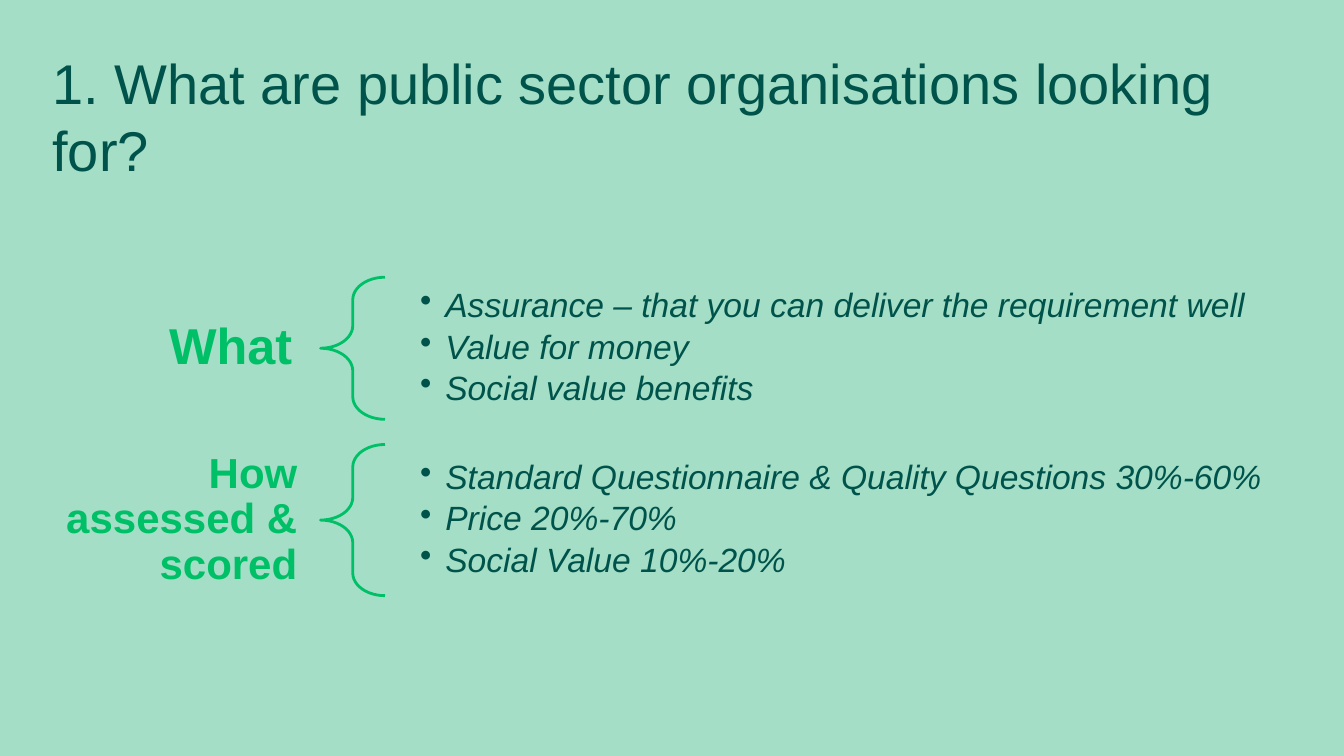
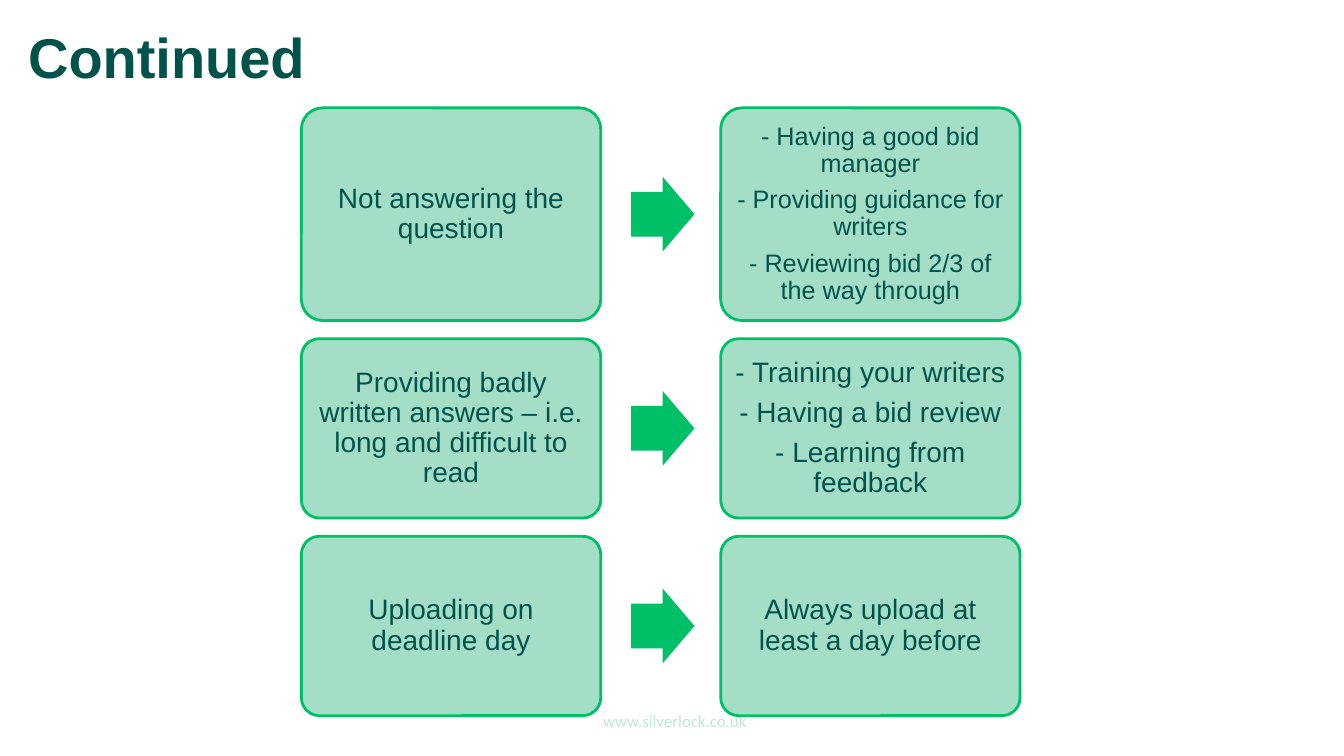
from dataclasses import dataclass

from lxml.etree import SubElement
from pptx import Presentation
from pptx.dml.color import RGBColor
from pptx.enum.shapes import MSO_SHAPE
from pptx.enum.text import MSO_ANCHOR, MSO_AUTO_SIZE, PP_ALIGN
from pptx.oxml.ns import qn
from pptx.util import Emu, Inches, Pt


@dataclass(frozen=True)
class Theme:
    dark: RGBColor = RGBColor.from_string("00534B")
    green: RGBColor = RGBColor.from_string("00C067")
    mint: RGBColor = RGBColor.from_string("A4DEC7")
    pale: RGBColor = RGBColor.from_string("C0E7D7")
    white: RGBColor = RGBColor.from_string("FFFFFF")
    font: str = "Arial"
    footer_font: str = "Calibri"
    title: int = 40
    bullet: int = 24
    box: int = 20
    small: int = 18
    footer: int = 12
    line: int = 2


T = Theme()

CRITERIA_TITLE = "1. What are public sector organisations looking for?"
# label, label size, side inset, row height, bullets
CRITERIA = [
    ("What", 36, 0.28, 1.41, [
        "Assurance – that you can deliver the requirement well",
        "Value for money",
        "Social value benefits",
    ]),
    ("How assessed & scored", 30, 0.23, 1.5, [
        "Standard Questionnaire & Quality Questions 30%-60%",
        "Price 20%-70%",
        "Social Value 10%-20%",
    ]),
]

PITFALLS_TITLE = "Continued"
FOOTER = "www.silverlock.co.uk"
# pitfall, remedies, remedy size, row height
PITFALLS = [
    ("Not answering the question", [
        "- Having a good bid manager",
        "- Providing guidance for writers",
        "- Reviewing bid 2/3 of the way through",
    ], T.small, 2.11),
    ("Providing badly written answers – i.e. long and difficult to read", [
        "- Training your writers",
        "- Having a bid review",
        "- Learning from feedback",
    ], T.box, 1.78),
    ("Uploading on deadline day", ["Always upload at least a day before"], T.box, 1.78),
]


def new_slide(prs, title, background, box, anchor, bold=False):
    s = prs.slides.add_slide(prs.slide_layouts[5])
    s.background.fill.solid()
    s.background.fill.fore_color.rgb = background
    sp = s.shapes.title
    sp.left, sp.top, sp.width, sp.height = map(Inches, box)
    write(sp.text_frame, [title], T.title, anchor=anchor, align=PP_ALIGN.LEFT,
          bold=bold, spacing=1, after=0)
    return s


def add_bullet(p, indent):
    pPr = p._p.get_or_add_pPr()
    pPr.set("marL", str(Inches(indent)))
    pPr.set("indent", str(-Inches(indent)))
    SubElement(pPr, qn("a:buChar")).set("char", "•")


def write(tf, lines, size, color=T.dark, font=T.font, align=PP_ALIGN.CENTER,
          anchor=MSO_ANCHOR.MIDDLE, insets=(0.1, 0.05), bold=False, italic=False,
          spacing=0.9, after=0.35, bullets=False):
    """Fill a frame; after is the paragraph gap as a share of the type size."""
    tf.word_wrap = True
    tf.auto_size = MSO_AUTO_SIZE.NONE
    tf.vertical_anchor = anchor
    tf.margin_left = tf.margin_right = Inches(insets[0])
    tf.margin_top = tf.margin_bottom = Inches(insets[1])
    tf.text = "\n".join(lines)
    for p in tf.paragraphs:
        p.alignment = align
        p.line_spacing = spacing
        p.space_after = Pt(size * after)
        if bullets:
            add_bullet(p, 0.25)
        for r in p.runs:
            r.font.name, r.font.size = font, Pt(size)
            r.font.bold, r.font.italic = bold, italic
            r.font.color.rgb = color


def add_text(s, box, lines, size, **style):
    sp = s.shapes.add_textbox(*map(Inches, box))
    write(sp.text_frame, lines, size, **style)


def add_preset(s, preset, box, adjustments, fill=None, line=None):
    sp = s.shapes.add_shape(preset, *map(Inches, box))
    sp.shadow.inherit = False
    for i, value in enumerate(adjustments):
        sp.adjustments[i] = value
    if fill is None:
        sp.fill.background()
    else:
        sp.fill.solid()
        sp.fill.fore_color.rgb = fill
    if line is None:
        sp.line.fill.background()
    else:
        sp.line.color.rgb = line
        sp.line.width = Pt(T.line)
    return sp


def criteria_slide(prs):
    s = new_slide(prs, CRITERIA_TITLE, T.mint, (0.42, 0.52, 12.05, 1.25),
                  MSO_ANCHOR.MIDDLE)
    label_w, brace_w, gap, list_w = 3.18, 0.64, 0.25, 8.64
    top = 2.75
    for label, size, inset, height, bullets in CRITERIA:
        add_text(s, (0, top, label_w, height), [label], size, color=T.green,
                 align=PP_ALIGN.RIGHT, insets=(inset, 0.1), bold=True)
        add_preset(s, MSO_SHAPE.LEFT_BRACE, (label_w, top, brace_w, height),
                   (0.35, 0.5), line=T.green)
        add_text(s, (label_w + brace_w + gap, top, list_w, height), bullets, T.bullet,
                 align=PP_ALIGN.LEFT, insets=(0.1, 0.1), italic=True, after=0.15,
                 bullets=True)
        top += height + gap


def pitfalls_slide(prs):
    s = new_slide(prs, PITFALLS_TITLE, T.white, (0.18, 0, 3.45, 0.94),
                  MSO_ANCHOR.BOTTOM, bold=True)
    add_text(s, (5.12, 6.95, 3.15, 0.4), [FOOTER], T.footer, color=T.pale,
             font=T.footer_font, spacing=1, after=0.5)
    left, top, box_w, pitch, gap = 2.99, 1.07, 2.97, 4.16, 0.18
    arrow_x, arrow_w, arrow_h = 6.26, 0.63, 0.74
    for pitfall, remedies, remedy_size, height in PITFALLS:
        for col, (lines, size) in enumerate([([pitfall], T.box), (remedies, remedy_size)]):
            sp = add_preset(s, MSO_SHAPE.ROUNDED_RECTANGLE,
                            (left + col * pitch, top, box_w, height),
                            (0.1,), T.mint, T.green)
            write(sp.text_frame, lines, size, insets=(0.08, 0.08))
        add_preset(s, MSO_SHAPE.RIGHT_ARROW,
                   (arrow_x, top + (height - arrow_h) / 2, arrow_w, arrow_h),
                   (0.6, 0.5), T.green)
        top += height + gap


def main():
    prs = Presentation()
    prs.slide_width, prs.slide_height = Emu(12192000), Inches(7.5)
    criteria_slide(prs)
    pitfalls_slide(prs)
    prs.save("out.pptx")


if __name__ == "__main__":
    main()
